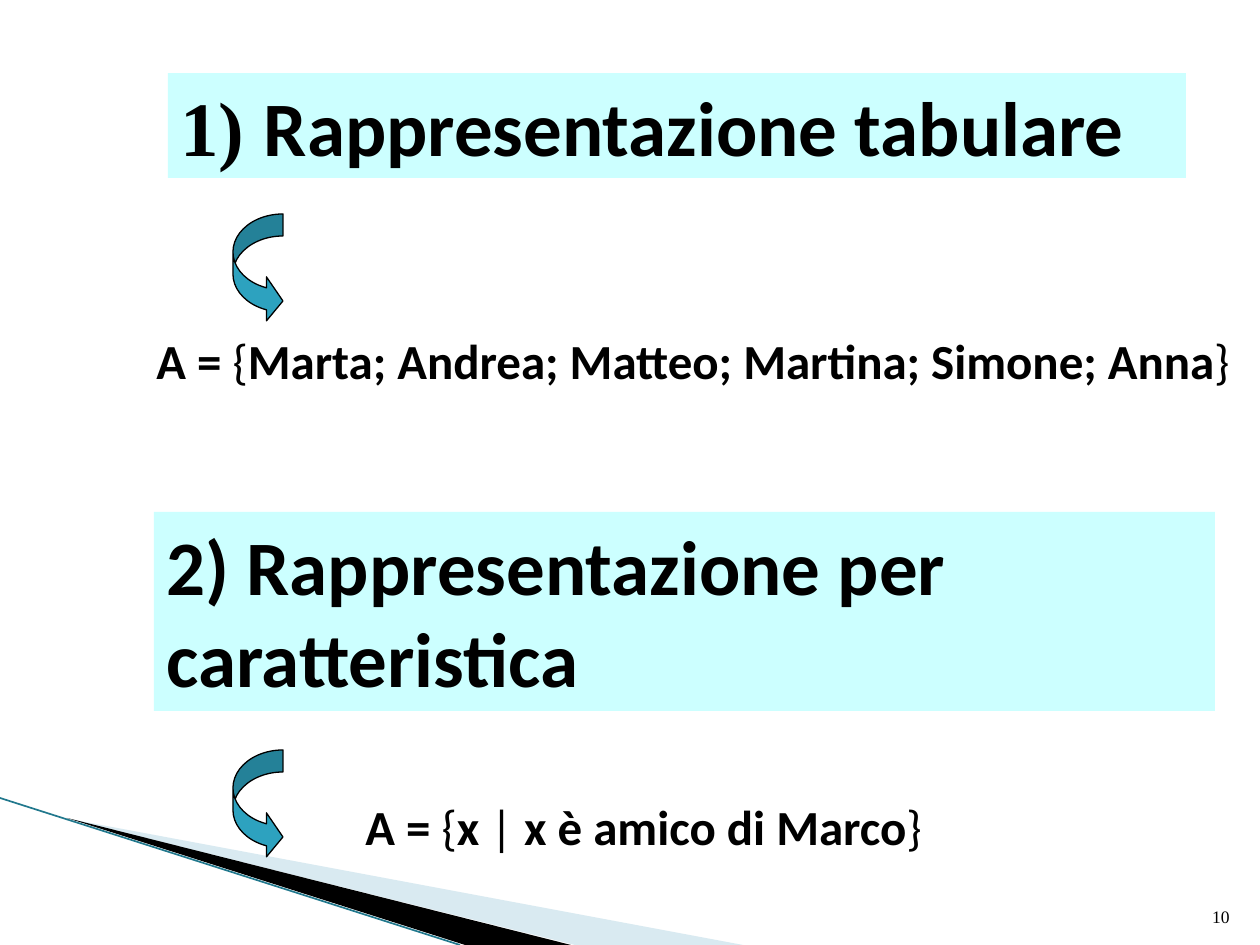
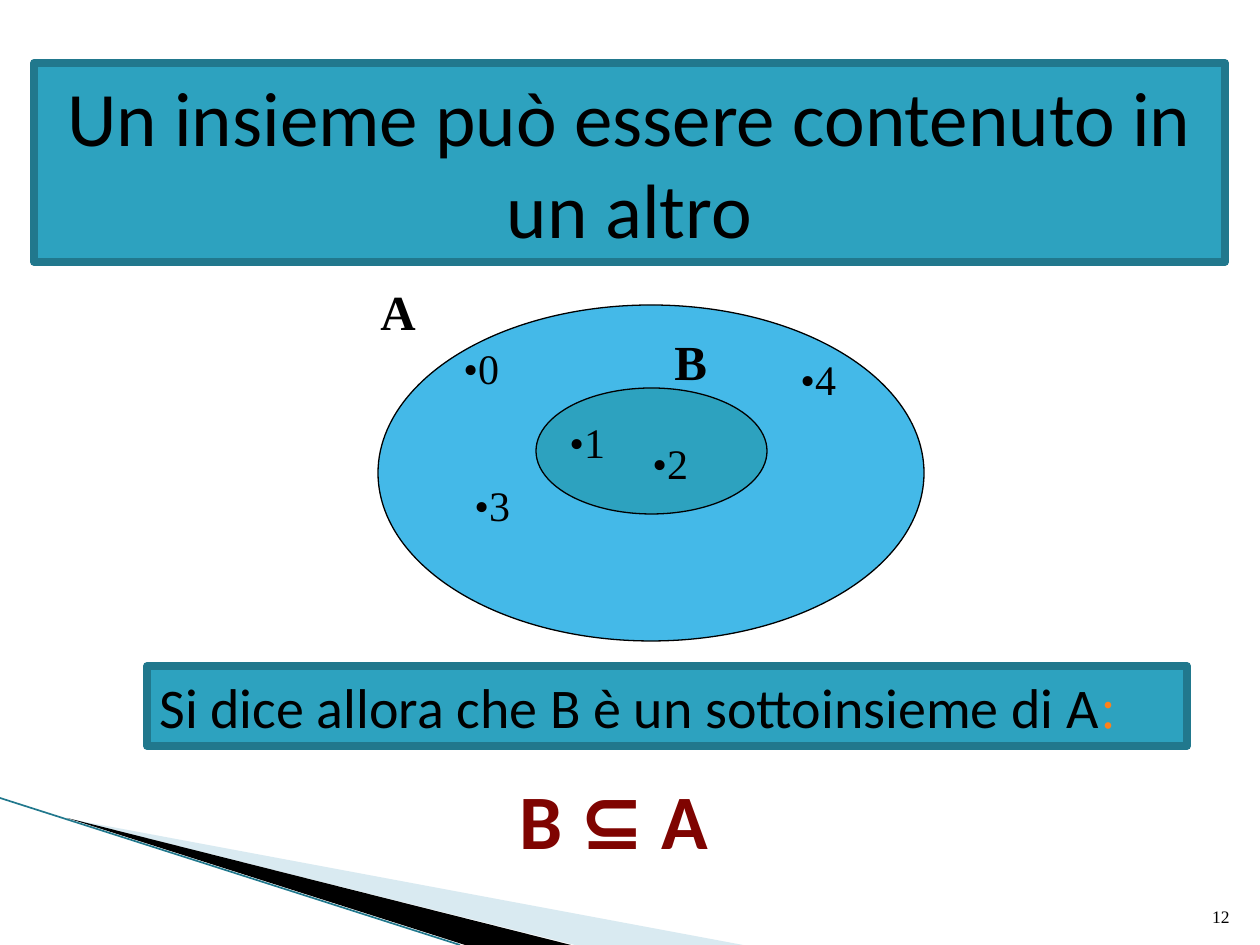
from dataclasses import dataclass

from lxml import etree
from pptx import Presentation
from pptx.dml.color import RGBColor
from pptx.enum.shapes import MSO_CONNECTOR, MSO_SHAPE
from pptx.enum.text import MSO_ANCHOR, MSO_AUTO_SIZE, PP_ALIGN
from pptx.oxml.ns import qn
from pptx.util import Pt

RECTANGLE = MSO_SHAPE.RECTANGLE
ELLIPSE = MSO_SHAPE.OVAL
CURVED_ARROW = MSO_SHAPE.CURVED_RIGHT_ARROW
STRAIGHT = MSO_CONNECTOR.STRAIGHT
LEFT, CENTER, RIGHT = PP_ALIGN.LEFT, PP_ALIGN.CENTER, PP_ALIGN.RIGHT
TOP, BOTTOM = MSO_ANCHOR.TOP, MSO_ANCHOR.BOTTOM
FIT_SHAPE = MSO_AUTO_SIZE.SHAPE_TO_FIT_TEXT
NO_FIT = MSO_AUTO_SIZE.NONE

EMU_PER_PX = 914400 / 126
SLIDE_W, SLIDE_H = 1260, 945


@dataclass(frozen=True)
class Theme:
    sans: str = "Calibri"
    serif: str = "Times New Roman"
    ink: str = "000000"
    teal: str = "2DA2BF"
    dark_teal: str = "21788D"
    sky: str = "44B9E8"
    aqua: str = "CCFFFF"
    mist: str = "A0CBDC"
    orange: str = "FF8119"
    maroon: str = "7F0401"
    title: int = 44
    statement: int = 32
    formula: int = 28
    element: int = 24
    number: int = 10
    thin: float = 0.75
    edge: float = 0.95
    frame: float = 4.33


def px(length):
    return round(length * EMU_PER_PX)


class Deck:
    def __init__(self, theme):
        self.theme = theme
        self.prs = Presentation()
        self.prs.slide_width, self.prs.slide_height = px(SLIDE_W), px(SLIDE_H)
        self.slide = None

    def new_slide(self, number):
        t = self.theme
        self.slide = self.prs.slides.add_slide(self.prs.slide_layouts[6])
        # Corner wedge
        self.wedge([(69, 819), (743, SLIDE_H), (575, SLIDE_H)], t.mist, 40)
        self.wedge([(67, 818), (571, SLIDE_H), (465, SLIDE_H)], t.ink)
        self.edge_line((0, 798), (460, SLIDE_H))
        # Slide number
        self.text((1192, 883, 50, 50), [(number, {})], t.number, font=t.serif,
                  align=RIGHT, anchor=BOTTOM, fit=NO_FIT)

    def paint(self, shape, fill, line=None, width=0):
        shape.shadow.inherit = False
        shape.fill.solid()
        shape.fill.fore_color.rgb = RGBColor.from_string(fill)
        if line:
            shape.line.color.rgb = RGBColor.from_string(line)
            shape.line.width = Pt(width)
        else:
            shape.line.fill.background()

    def wedge(self, points, fill, opacity=100):
        builder = self.slide.shapes.build_freeform(*points[0], scale=EMU_PER_PX)
        builder.add_line_segments(points[1:], close=True)
        wedge = builder.convert_to_shape()
        self.paint(wedge, fill)
        if opacity < 100:
            color = wedge._element.spPr.find(qn("a:solidFill"))[0]
            etree.SubElement(color, qn("a:alpha"), val=str(opacity * 1000))

    def edge_line(self, start, end):
        edge = self.slide.shapes.add_connector(
            STRAIGHT, *(px(v) for v in (*start, *end)))
        edge.line.color.rgb = RGBColor.from_string(self.theme.dark_teal)
        edge.line.width = Pt(self.theme.edge)
        etree.SubElement(edge._element.spPr, qn("a:effectLst"))

    def shape(self, kind, box, fill, line=None, width=0):
        shape = self.slide.shapes.add_shape(kind, *map(px, box))
        self.paint(shape, fill, line, width)
        return shape

    def fill_text(self, shape, runs, size, font=None, bold=False, color=None,
                  align=LEFT, anchor=TOP, fit=FIT_SHAPE):
        frame = shape.text_frame
        frame_format = {"word_wrap": True, "auto_size": fit,
                        "vertical_anchor": anchor}
        for name, value in frame_format.items():
            setattr(frame, name, value)
        paragraph = frame.paragraphs[0]
        paragraph.alignment = align
        base = {"name": font or self.theme.sans, "size": Pt(size), "bold": bold}
        for words, changes in runs:
            run = paragraph.add_run()
            run.text = words
            values = {**base, **changes}
            ink = values.pop("color", color or self.theme.ink)
            for name, value in values.items():
                setattr(run.font, name, value)
            run.font.color.rgb = RGBColor.from_string(ink)

    def text(self, box, runs, size, **style):
        text_box = self.slide.shapes.add_textbox(*map(px, box))
        self.fill_text(text_box, runs, size, **style)

    def heading(self, box, runs):
        band = self.shape(RECTANGLE, box, self.theme.aqua)
        self.fill_text(band, runs, self.theme.title, bold=True)

    def framed(self, box, runs, size, **style):
        t = self.theme
        panel = self.shape(RECTANGLE, box, t.teal, t.dark_teal, t.frame)
        self.fill_text(panel, runs, size, **style)

    def formula(self, box, runs):
        self.text(box, runs, self.theme.formula, bold=True)

    def curved_arrow(self, left, top):
        t = self.theme
        arrow = self.shape(CURVED_ARROW, (left, top, 50, 109), t.teal, t.ink, t.thin)
        for i, value in enumerate((0.44, 0.88, 0.33)):
            arrow.adjustments[i] = value

    def set_ellipse(self, box, fill):
        self.shape(ELLIPSE, box, fill, self.theme.ink, self.theme.thin)

    def label(self, box, words, size, bold=False):
        self.text(box, [(words, {})], size, font=self.theme.serif, bold=bold)


def representations(deck):
    light = {"bold": False}
    deck.new_slide("10")

    # Listing the elements
    deck.heading((168, 73, 1018, 105),
                 [("1) ", {"name": deck.theme.serif}),
                  ("Rappresentazione tabulare", {})])
    deck.formula((144, 324, 1116, 72),
                 [("A = ", {}), ("{", light),
                  ("Marta; Andrea; Matteo; Martina; Simone; Anna", {}),
                  ("}", light)])

    # Stating the common property
    deck.heading((154, 512, 1061, 199),
                 [("2) Rappresentazione per caratteristica", {})])
    deck.formula((353, 790, 774, 72),
                 [("A = ", {}), ("{", light), ("x ", {}), ("| ", light),
                  ("x è amico di Marco", {}), ("}", light)])

    for arrow_top in (214, 750):
        deck.curved_arrow(233, arrow_top)


def subset(deck):
    t = deck.theme
    deck.new_slide("12")
    deck.framed((34, 63, 1191, 199),
                [("Un insieme può essere contenuto in un altro", {})],
                t.title, align=CENTER)

    # Venn diagram
    deck.set_ellipse((378, 305, 546, 336), t.sky)
    deck.set_ellipse((536, 388, 231, 126), t.teal)
    elements = {"1": (557, 410), "2": (640, 431), "0": (451, 336),
                "3": (462, 473), "4": (788, 347)}
    for element, corner in elements.items():
        deck.label((*corner, 84, 63), f"•{element}", t.element)
    for set_name, corner in {"B": (662, 325), "A": (368, 275)}.items():
        deck.label((*corner, 95, 72), set_name, t.formula, bold=True)

    # Conclusion
    deck.framed((147, 666, 1040, 80),
                [("Si dice allora che B è un sottoinsieme di A", {}),
                 (":", {"name": t.serif, "color": t.orange})], t.statement)
    deck.text((404, 766, 420, 105), [("B ⊆ A", {})], t.title,
              bold=True, color=t.maroon, align=CENTER)


def main():
    deck = Deck(Theme())
    representations(deck)
    subset(deck)
    deck.prs.save("out.pptx")


if __name__ == "__main__":
    main()
